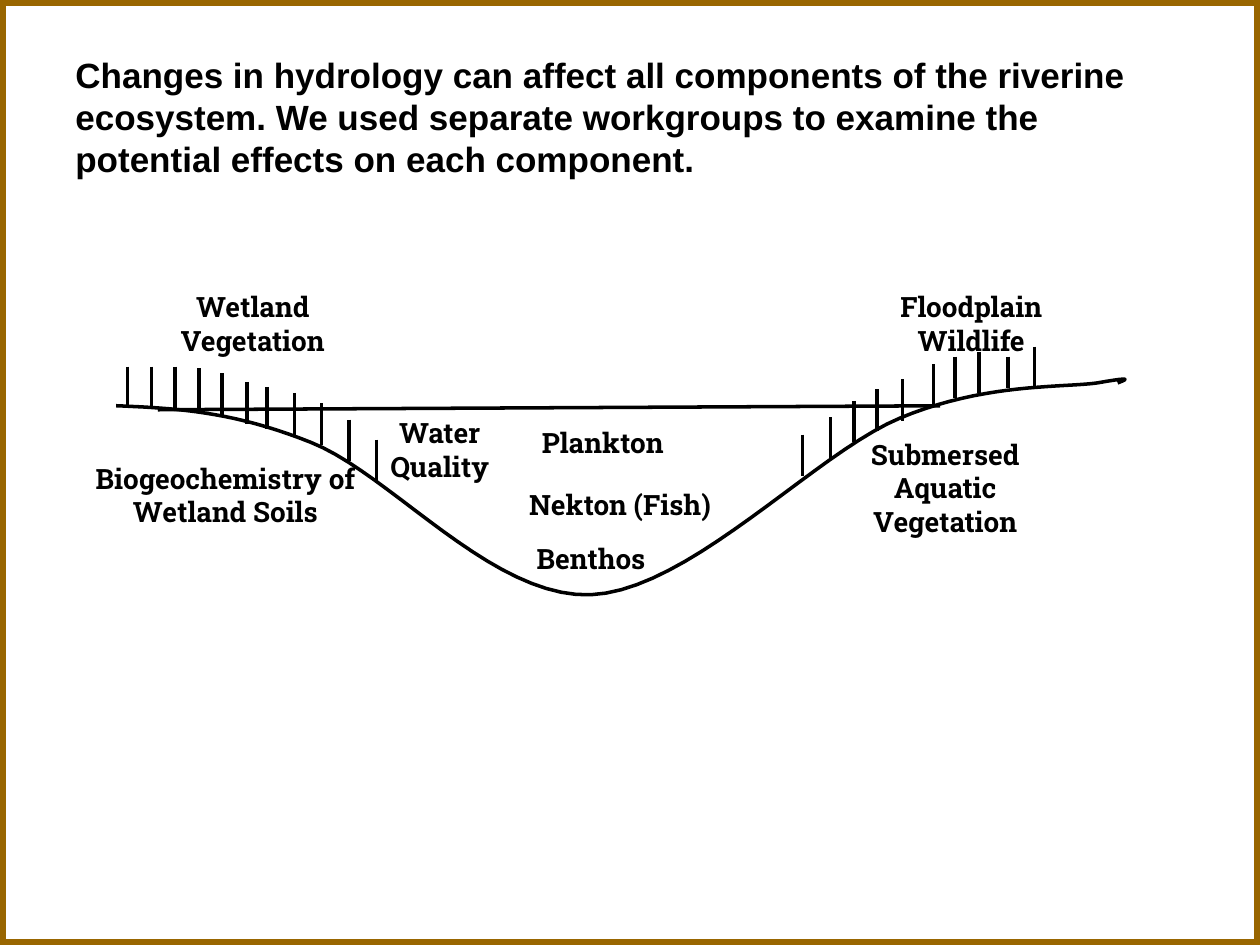
import pptx
import pptx.util
import pptx.dml.color
import pptx.enum.shapes
import pptx.enum.text
import pptx.oxml.ns
import lxml.etree

Cm, Pt = pptx.util.Cm, pptx.util.Pt
MID = pptx.enum.text.MSO_ANCHOR.MIDDLE
TOP = pptx.enum.text.MSO_ANCHOR.TOP
FIT = pptx.enum.text.MSO_AUTO_SIZE


def paint(color, code):
    color.rgb = pptx.dml.color.RGBColor.from_string(code)


def draw(x1, y1, x2, y2):
    kind = pptx.enum.shapes.MSO_CONNECTOR.STRAIGHT
    line = shapes.add_connector(kind, Cm(x1), Cm(y1), Cm(x2), Cm(y2))
    line.line.width = Pt(2)
    paint(line.line.color, "000000")
    props = line._element.spPr
    lxml.etree.SubElement(props, pptx.oxml.ns.qn("a:effectLst"))


deck = pptx.Presentation()
deck.slide_width, deck.slide_height = Cm(25.4), Cm(19.05)
slide = deck.slides.add_slide(deck.slide_layouts[6])
shapes = slide.shapes
paint(slide.background.fill.fore_color if slide.background.fill.solid()
      else slide.background.fill.fore_color, "FFFFFF")

# River bed: start point, then cubic curves of two controls and an end
start = (2.34, 8.18)
curves = [
    [(3.51, 8.23), (4.67, 8.28), (6.27, 8.92)],
    [(7.87, 9.55), (9.93, 12.07), (11.91, 11.99)],
    [(13.89, 11.91), (16.43, 9.14), (18.14, 8.43)],
    [(19.84, 7.72), (21.39, 7.82), (22.12, 7.72)],
    [(22.86, 7.59), (22.71, 7.65), (22.53, 7.72)],
]
steps = 20
points = []
last = start
for one, two, end in curves:
    for step in range(1, steps + 1):
        t = step / steps
        u = 1 - t
        points.append([
            Cm(u**3 * a + 3 * u * u * t * b + 3 * u * t * t * c + t**3 * d)
            for a, b, c, d in zip(last, one, two, end)
        ])
    last = end
pen = shapes.build_freeform(Cm(start[0]), Cm(start[1]))
pen.add_line_segments(points, close=False)
bed = pen.convert_to_shape()
bed.shadow.inherit = False
bed.fill.background()
bed.line.width = Pt(2)
paint(bed.line.color, "000000")

# Water surface
draw(3.18, 8.26, 18.95, 8.18)

# Plant stems: x, top, height
tall, short = 0.84, 0.64
stems = [
    (2.57, 7.39, tall), (3.05, 7.39, tall), (3.53, 7.39, tall),
    (4.01, 7.42, tall), (4.47, 7.52, tall), (4.98, 7.7, tall),
    (5.38, 7.8, tall), (5.94, 7.92, tall), (6.48, 8.13, tall),
    (7.04, 8.46, tall), (7.59, 8.86, tall),
    (16.18, 8.76, tall), (16.74, 8.41, tall), (17.22, 8.08, tall),
    (17.68, 7.85, tall), (18.19, 7.65, tall), (18.82, 7.34, tall),
    (19.25, 7.19, tall), (19.74, 7.09, tall), (20.32, 7.19, short),
    (20.85, 6.99, tall),
]
for x, top, height in stems:
    draw(x, top, x, top + height)

# Slide border
frame = shapes.add_shape(pptx.enum.shapes.MSO_SHAPE.RECTANGLE,
                         0, 0, deck.slide_width, deck.slide_height)
frame.shadow.inherit = False
frame.fill.background()
frame.line.width = Pt(6.5)
paint(frame.line.color, "996600")

# Title and labels: text, left, top, width, height
title = ("Changes in hydrology can affect all components of the riverine "
         "ecosystem. We used separate workgroups to examine the potential "
         "effects on each component.")
texts = [
    (title, 1.27, 0.76, 22.86, 3.18),
    ("Plankton", 10.36, 8.46, 3.58, 0.94),
    ("Nekton (Fish)", 10.19, 9.7, 4.62, 0.94),
    ("Benthos", 10.24, 10.8, 3.35, 0.94),
    ("Submersed Aquatic Vegetation", 16.31, 8.69, 5.49, 2.31),
    ("Wetland Vegetation", 2.82, 5.72, 4.55, 1.63),
    ("Biogeochemistry of Wetland Soils", 1.47, 9.17, 6.15, 1.63),
    ("Floodplain Wildlife", 17.42, 5.72, 4.32, 1.63),
    ("Water Quality", 7.19, 8.26, 3.35, 1.63),
]
for text, left, top, width, height in texts:
    head = text == title
    box = shapes.add_textbox(Cm(left), Cm(top), Cm(width), Cm(height))
    body = box.text_frame
    body.word_wrap = True
    body.auto_size = FIT.NONE if head else FIT.SHAPE_TO_FIT_TEXT
    body.vertical_anchor = MID if head else TOP
    para = body.paragraphs[0]
    align = pptx.enum.text.PP_ALIGN
    para.alignment = align.LEFT if head else align.CENTER
    para.line_spacing = Pt(24 if head else 19.2)
    run = para.add_run()
    run.text = text
    run.font.name = "Arial" if head else "Roboto Slab"
    run.font.size = Pt(20 if head else 16)
    run.font.bold = True
    paint(run.font.color, "000000")

deck.save("out.pptx")
